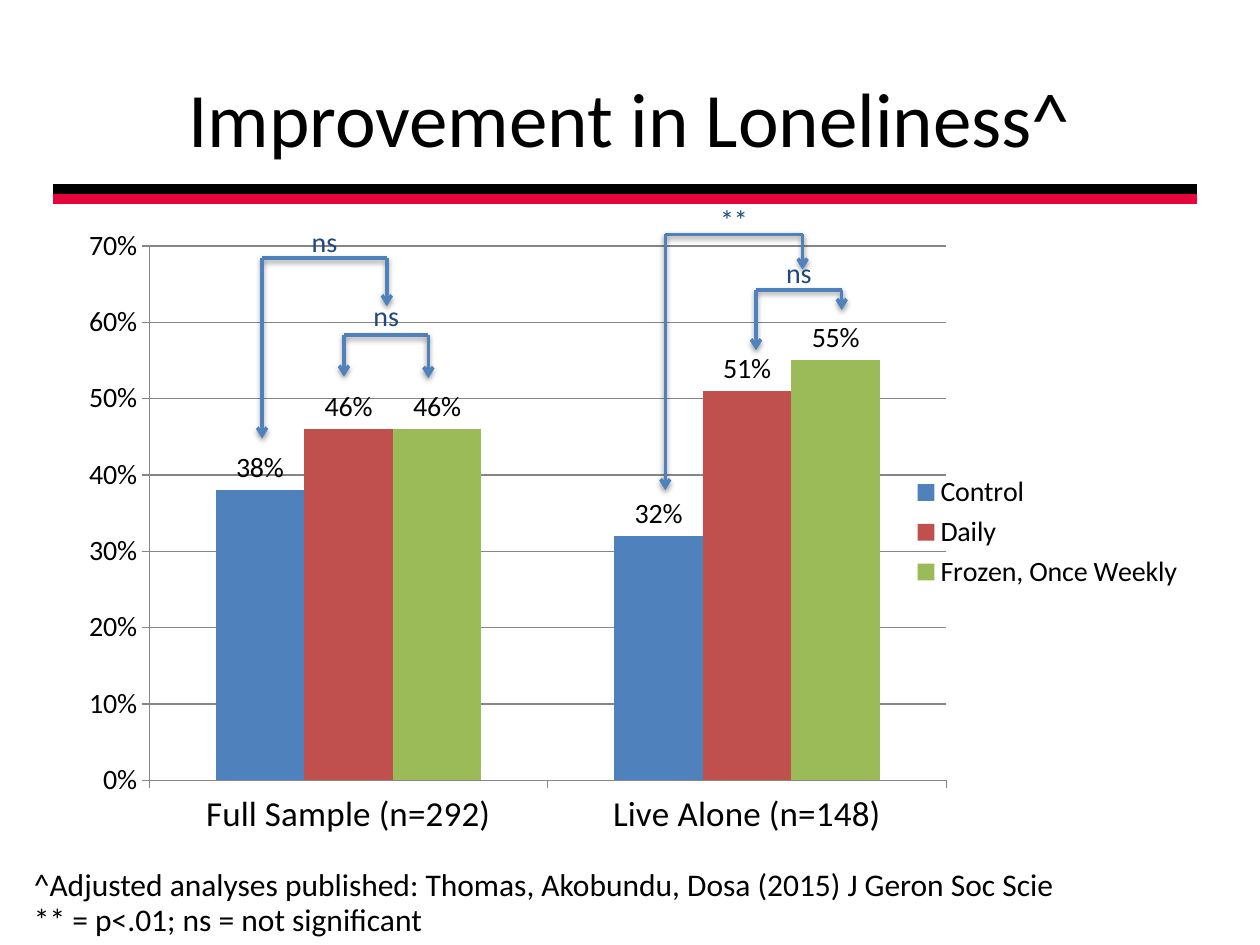
from dataclasses import dataclass

from lxml import etree
from pptx import Presentation
from pptx import util as u
from pptx.chart.data import CategoryChartData
from pptx.dml.color import RGBColor
from pptx.enum import chart as ch, shapes, text
from pptx.oxml import parse_xml
from pptx.oxml.ns import nsdecls, qn

In = u.Inches


@dataclass(frozen=True)
class Theme:
    font: str = "Calibri"
    ink: str = "000000"
    red: str = "E5053A"
    mark: str = "4F81BD"
    note: str = "1F497D"
    grid: str = "868686"
    bars: tuple = ("4F81BD", "C0504D", "9BBB59")
    title: int = 44
    axis: int = 20
    foot: int = 18
    body: int = 16


T = Theme()


def rgb(code):
    return RGBColor.from_string(code)


def style(font, size, color=T.ink):
    font.name, font.size, font.bold = T.font, u.Pt(size), False
    font.color.rgb = rgb(color)


def put_text(slide, box, words, size, color=T.ink, align=text.PP_ALIGN.LEFT,
             anchor=text.MSO_ANCHOR.TOP):
    frame = slide.shapes.add_textbox(*map(In, box)).text_frame
    frame.word_wrap = True
    frame.vertical_anchor = anchor
    para = frame.paragraphs[0]
    para.alignment = align
    run = para.add_run()
    run.text = words
    style(run.font, size, color)


def put_line(slide, start, end, color, width):
    line = slide.shapes.add_connector(
        shapes.MSO_CONNECTOR.STRAIGHT, *map(In, (*start, *end)))
    line.line.color.rgb = rgb(color)
    line.line.width = u.Pt(width)
    effect = etree.SubElement(line._element.spPr, qn("a:effectLst"))
    return line, effect


def put_mark(slide, start, end, arrow=False):
    line, effect = put_line(slide, start, end, T.mark, 2)
    effect.append(parse_xml(
        f'<a:outerShdw {nsdecls("a")} blurRad="{u.Pt(3.1)}" dist="{u.Pt(1.6)}" '
        'dir="5400000" rotWithShape="0"><a:srgbClr val="000000">'
        '<a:alpha val="38000"/></a:srgbClr></a:outerShdw>'))
    if arrow:
        ln = line.line._get_or_add_ln()
        etree.SubElement(ln, qn("a:tailEnd")).set("type", "arrow")


def add_head(slide, box):
    x, y, w, h = box
    put_text(slide, box, "Improvement in Loneliness^", T.title,
             align=text.PP_ALIGN.CENTER, anchor=text.MSO_ANCHOR.MIDDLE)
    # Double rule under the title
    for drop, color in ((-0.05, T.ink), (0.03, T.red)):
        level = y + h + drop
        put_line(slide, (x - 0.08, level), (x + w, level), color, 6)


def set_plot(chart, x, y, w, h):
    area = chart._chartSpace.chart.plotArea
    for old in area.findall(qn("c:layout")):
        area.remove(old)
    parts = "".join(f'<c:{key} val="{val}"/>' for key, val in (
        ("layoutTarget", "inner"), ("xMode", "edge"), ("yMode", "edge"),
        ("x", x), ("y", y), ("w", w), ("h", h)))
    area.insert(0, parse_xml(
        f'<c:layout {nsdecls("c")}><c:manualLayout>{parts}'
        '</c:manualLayout></c:layout>'))


def add_bars(slide, box):
    data = CategoryChartData(number_format="0%")
    data.categories = ["Full Sample (n=292)", "Live Alone (n=148)"]
    data.add_series("Control", (0.38, 0.32))
    data.add_series("Daily", (0.46, 0.51))
    data.add_series("Frozen, Once Weekly", (0.46, 0.55))
    chart = slide.shapes.add_chart(
        ch.XL_CHART_TYPE.COLUMN_CLUSTERED, *map(In, box), data).chart
    style(chart.font, T.body)
    chart.has_title = False
    set_plot(chart, 0.076, 0.041, 0.703, 0.857)

    # Legend and axes
    chart.has_legend = True
    chart.legend.position = ch.XL_LEGEND_POSITION.RIGHT
    chart.legend.include_in_layout = False
    style(chart.legend.font, T.body)
    cat, val = chart.category_axis, chart.value_axis
    val.minimum_scale, val.maximum_scale, val.major_unit = 0, 0.7, 0.1
    val.has_major_gridlines = True
    val.tick_labels.number_format = "0%"
    val.tick_labels.number_format_is_linked = False
    for axis, size in ((cat, T.axis), (val, T.body)):
        style(axis.tick_labels.font, size)
        axis.major_tick_mark = ch.XL_TICK_MARK.OUTSIDE
    for part in (cat, val, val.major_gridlines):
        part.format.line.color.rgb = rgb(T.grid)
        part.format.line.width = u.Pt(0.75)

    # Columns and their values
    plot = chart.plots[0]
    plot.gap_width, plot.overlap = 150, 0
    plot.vary_by_categories = False
    for series, color in zip(plot.series, T.bars):
        series.format.fill.solid()
        series.format.fill.fore_color.rgb = rgb(color)
        series.invert_if_negative = False
        tags = series.data_labels
        tags.show_value = True
        tags.number_format, tags.number_format_is_linked = "0%", False
        tags.position = ch.XL_LABEL_POSITION.OUTSIDE_END
        style(tags.font, T.body)


def add_bracket(slide, box, left, right, rise, words):
    """Bar with arrows down from both ends; the label is centred above."""
    x, y, w = box
    put_mark(slide, (x, y), (x + w, y))
    for end, drop in ((x, left), (x + w, right)):
        put_mark(slide, (end, y), (end, y + drop), arrow=True)
    wide = 0.68
    put_text(slide, (x + (w - wide) / 2, y - rise, wide, 0.3), words,
             T.body, T.note, text.PP_ALIGN.CENTER)


def add_tests(slide, box):
    x, y = box[:2]
    # Left, top, width, left drop, right drop, label rise, label
    for dx, dy, w, left, right, rise, words in (
            (1.58, 0.3, 0.99, 1.43, 0.38, 0.32, "ns"),
            (2.23, 0.91, 0.67, 0.33, 0.34, 0.34, "ns"),
            (4.78, 0.11, 1.09, 2.03, 0.28, 0.3, "**"),
            (5.5, 0.55, 0.68, 0.48, 0.16, 0.32, "ns")):
        add_bracket(slide, (x + dx, y + dy, w), left, right, rise, words)


def add_foot(slide, box):
    x, y, w, h = box
    for row, words in enumerate((
            "^Adjusted analyses published: Thomas, Akobundu, Dosa (2015) "
            "J Geron Soc Scie",
            "** = p<.01; ns = not significant")):
        put_text(slide, (x, y + row * 0.27, w, h), words, T.foot)


def main():
    deck = Presentation()
    deck.slide_width, deck.slide_height = In(10), In(7.5)
    slide = deck.slides.add_slide(deck.slide_layouts[6])
    body = (0.5, 1.75, 9, 4.95)
    add_head(slide, (0.5, 0.3, 9, 1.25))
    add_bars(slide, body)
    add_tests(slide, body)
    add_foot(slide, (0.17, 6.82, 8.48, 0.4))
    deck.save("out.pptx")


if __name__ == "__main__":
    main()
